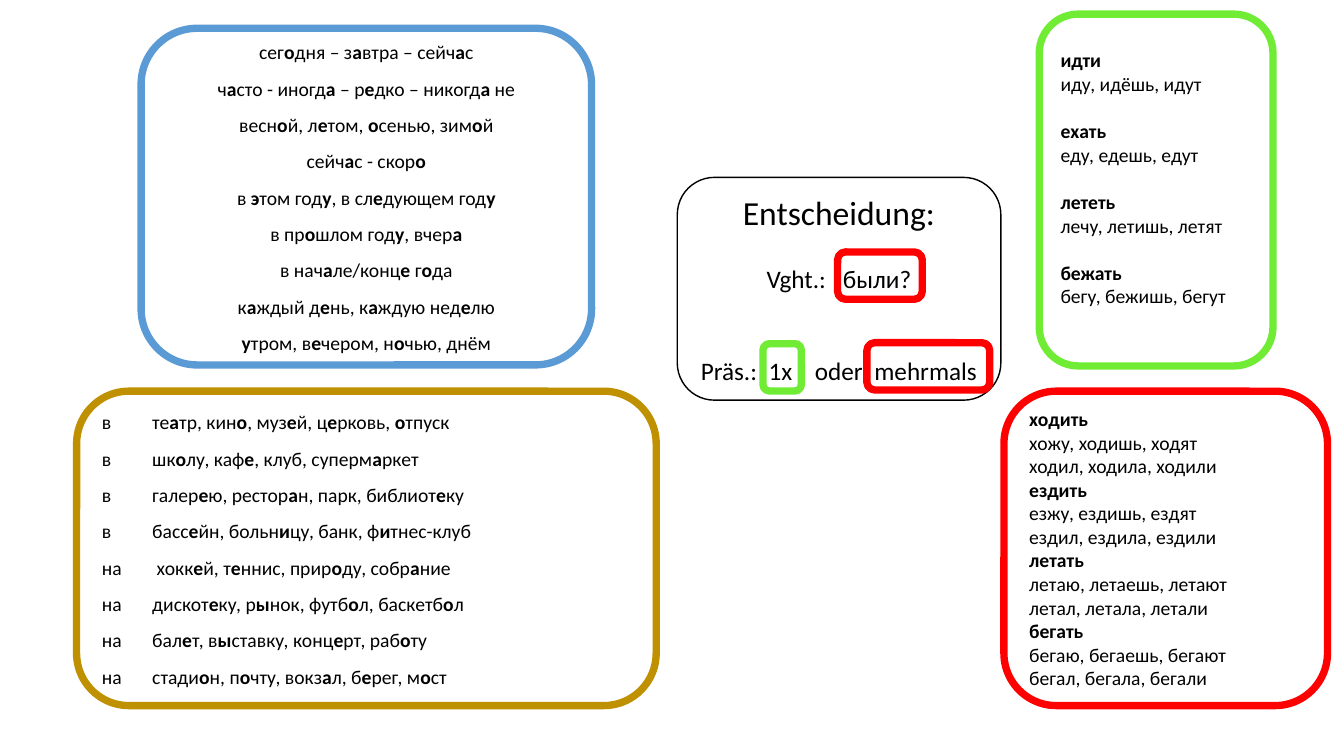
"""Builds a one-slide overview of Russian time adverbs, destinations and verbs of motion."""
from lxml.etree import SubElement
from pptx import Presentation
from pptx.dml.color import RGBColor
from pptx.enum.shapes import MSO_SHAPE
from pptx.enum.text import MSO_ANCHOR, PP_ALIGN
from pptx.oxml.ns import qn
from pptx.util import Pt

COLORS = {
    "red": "FF0000",
    "green": "71EC34",
    "blue": "5B9BD5",
    "gold": "BF9000",
    "black": "000000",
}
FONT = "Calibri"
BORDER = 5.25
LINE = 17

# Text between asterisks is bold.
TIMES = [
    "сег*о*дня – з*а*втра – cейч*а*с",
    "ч*а*сто - иногд*а* – р*е*дко – никогд*а *не",
    "весн*о*й, л*е*том, *о*сенью, зим*о*й",
    "сейч*а*с - скор*о*",
    "в *э*том год*у*, в сл*е*дующем год*у*",
    "в пр*о*шлом год*у*, вчер*а*",
    "в нач*а*ле/конц*е* г*о*да",
    "к*а*ждый д*е*нь, к*а*ждую нед*е*лю",
    "*у*тром, в*е*чером, н*о*чью, днём",
]
PLACES = [
    "в\tте*а*тр, кин*о*, муз*е*й, ц*е*рковь, *о*тпуск",
    "в\tшк*о*лу, каф*е*, клуб, суперм*а*ркет",
    "в\tгалер*е*ю, рестор*а*н, парк, библиот*е*ку",
    "в\tбасс*е*йн, больн*и*цу, банк, ф*и*тнес-клуб",
    "на\t хокк*е*й, т*е*ннис, прир*о*ду, собр*а*ние",
    "на\tдискот*е*ку, р*ы*нок, футб*о*л, баскетб*о*л",
    "на\tбал*е*т, в*ы*ставку, конц*е*рт, раб*о*ту",
    "на\tстади*о*н, п*о*чту, вокз*а*л, б*е*рег, м*о*ст",
]
ONE_WAY = [
    "*идти*", "иду, идёшь, идут",
    "*ехать*", "еду, едешь, едут",
    "*лететь*", "лечу, летишь, летят",
    "*бежать*", "бегу, бежишь, бегут",
]
REPEATED = [
    "*ходить*", "хожу, ходишь, ходят", "ходил, ходила, ходили",
    "*ездить*", "езжу, ездишь, ездят", "ездил, ездила, ездили",
    "*летать*", "летаю, летаешь, летают", "летал, летала, летали",
    "*бегать*", "бегаю, бегаешь, бегают", "бегал, бегала, бегали",
]
DECISION = [
    ("\tEntscheidung:", 24, 0, [30]),
    ("\tVght.:\tбыли?", 18, 22, [47, 101.5]),
    ("Präs.:\t1x\toder\tmehrmals", 18, 44, [48.5, 81.5, 124]),
]
MARKERS = [
    ((598.3, 180, 60.5, 33.8), "red"),
    ((545, 245.5, 27.4, 33.8), "green"),
    ((619.2, 244.8, 87.8, 33.8), "red"),
]


def add_frame(slide, box, color, width=BORDER):
    sp = slide.shapes.add_shape(MSO_SHAPE.ROUNDED_RECTANGLE, *map(Pt, box))
    sp.shadow.inherit = False
    sp.fill.background()
    sp.line.color.rgb = RGBColor.from_string(COLORS[color])
    sp.line.width = Pt(width)
    tf = sp.text_frame
    tf.word_wrap = True
    tf.vertical_anchor = MSO_ANCHOR.MIDDLE
    return tf


def add_line(tf, i, text, size=14, align=PP_ALIGN.LEFT):
    p = tf.add_paragraph() if i else tf.paragraphs[0]
    p.alignment = align
    p.font.name = FONT
    p.font.size = Pt(size)
    p.font.color.rgb = RGBColor.from_string(COLORS["black"])
    for n, part in enumerate(text.split("*")):
        if part:
            r = p.add_run()
            r.text = part
            if n % 2:
                r.font.bold = True
    return p


def add_tabs(p, stops):
    tabs = SubElement(p._p.pPr, qn("a:tabLst"))
    for stop in stops:
        SubElement(tabs, qn("a:tab"), pos=str(Pt(stop)), algn="l")
    p._p.pPr.find(qn("a:defRPr")).addprevious(tabs)


def add_phrases(slide, box, color, lines, align):
    tf = add_frame(slide, box, color)
    for i, text in enumerate(lines):
        p = add_line(tf, i, text, align=align)
        p.line_spacing = 1.07
        p.space_after = Pt(8)


def add_verbs(slide, box, color, lines, gap=0):
    tf = add_frame(slide, box, color)
    tf.margin_bottom = Pt(3.6 + gap)
    for i, text in enumerate(lines):
        p = add_line(tf, i, text)
        if i and text.startswith("*"):
            p.space_before = Pt(gap)


def add_decision(slide, box):
    tf = add_frame(slide, box, "black", 1)
    tf.margin_left, tf.margin_right = Pt(9), Pt(2)
    for i, (text, size, gap, stops) in enumerate(DECISION):
        p = add_line(tf, i, text, size)
        p.space_before = Pt(gap)
        add_tabs(p, stops)


def main():
    prs = Presentation()
    prs.slide_width, prs.slide_height = Pt(960), Pt(540)
    slide = prs.slides.add_slide(prs.slide_layouts[6])
    add_verbs(slide, (717.1, 279.4, 231.1, 224.6), "red", REPEATED)
    add_phrases(slide, (100.8, 20.2, 321.8, 240.5), "blue", TIMES, PP_ALIGN.CENTER)
    add_phrases(slide, (54.7, 279.4, 414, 224.6), "gold", PLACES, PP_ALIGN.LEFT)
    add_verbs(slide, (742.3, 10.1, 167, 251.3), "green", ONE_WAY, LINE)
    add_decision(slide, (483.8, 126.7, 231.1, 159.1))
    for box, color in MARKERS:
        add_frame(slide, box, color)
    prs.save("out.pptx")


if __name__ == "__main__":
    main()
